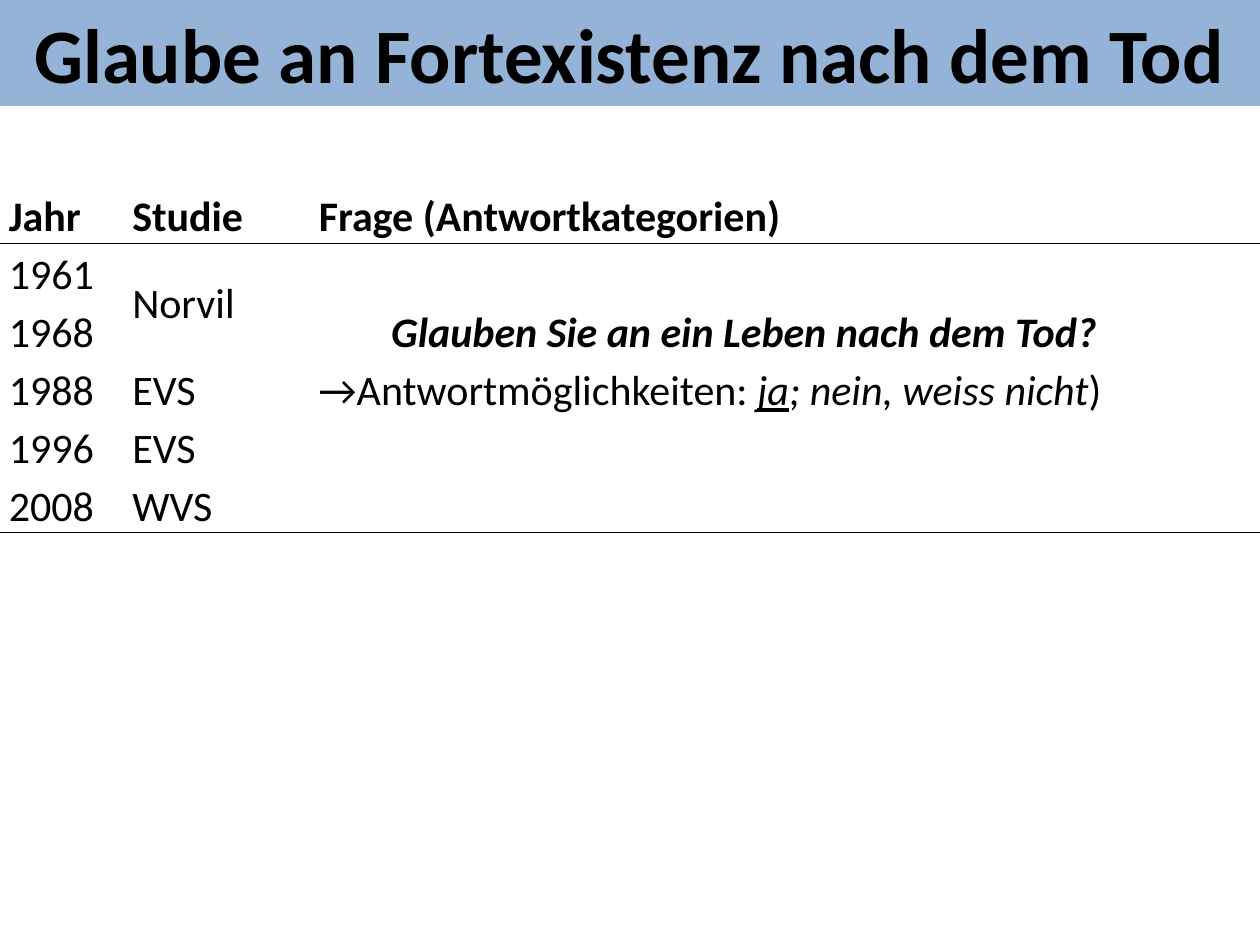
from dataclasses import dataclass

from lxml import etree
from pptx import Presentation
from pptx.dml.color import RGBColor
from pptx.enum.shapes import MSO_SHAPE
from pptx.enum.text import MSO_ANCHOR, PP_ALIGN
from pptx.oxml.ns import qn
from pptx.util import Inches, Pt

COLORS = {"banner": "95B3D7", "text": "000000", "rule": "000000", "paper": "FFFFFF"}
FONT = "Calibri"
CENTER, JUSTIFY, LEFT = PP_ALIGN.CENTER, PP_ALIGN.JUSTIFY, PP_ALIGN.LEFT
MIDDLE = MSO_ANCHOR.MIDDLE
RECTANGLE = MSO_SHAPE.RECTANGLE
LINE_HEIGHT = 0.46
LINE_SPACING = 1.13
RULE_WIDTH = 0.5
COLUMN_WIDTHS = (0.98, 1.1, 7.72, 0.2)
SIDE_MARGIN = 0.07
QUESTION_COLUMN = 2
QUESTION_INDENT = 0.45


@dataclass
class Span:
    text: str
    bold: bool = False
    italic: bool = False
    underline: bool = False


@dataclass
class StudyRow:
    years: tuple[str, ...]
    study: str


STUDIES = (
    StudyRow(("1961", "1968"), "Norvil"),
    StudyRow(("1988",), "EVS"),
    StudyRow(("1996",), "EVS"),
    StudyRow(("2008",), "WVS"),
)
HEADINGS = ("Jahr", "Studie", "Frage (Antwortkategorien)")
QUESTION = [Span("Glauben Sie an ein Leben nach dem Tod?", bold=True, italic=True)]
ANSWERS = [
    Span("→Antwortmöglichkeiten: "),
    Span("ja", italic=True, underline=True),
    Span("; nein, weiss nicht", italic=True),
    Span(")"),
]


def rgb(name: str) -> RGBColor:
    return RGBColor.from_string(COLORS[name])


def write_spans(paragraph, spans: list[Span], size: float, align) -> None:
    paragraph.alignment = align
    for span in spans:
        run = paragraph.add_run()
        run.text = span.text
        font = run.font
        font.name, font.size = FONT, Pt(size)
        font.bold, font.italic, font.underline = span.bold, span.italic, span.underline
        font.color.rgb = rgb("text")


def write_cell(cell, lines: list[list[Span]], aligns: list) -> None:
    frame = cell.text_frame
    for index, (spans, align) in enumerate(zip(lines, aligns)):
        paragraph = frame.add_paragraph() if index else frame.paragraphs[0]
        paragraph.line_spacing = LINE_SPACING
        write_spans(paragraph, spans, 24, align)


def set_borders(cell, top: str, bottom: str) -> None:
    properties = cell._tc.get_or_add_tcPr()
    sides = {"lnL": "paper", "lnR": "paper", "lnT": top, "lnB": bottom}
    for position, (side, color) in enumerate(sides.items()):
        line = etree.Element(qn(f"a:{side}"), w=str(Pt(RULE_WIDTH)))
        fill = etree.SubElement(line, qn("a:solidFill"))
        etree.SubElement(fill, qn("a:srgbClr"), val=COLORS[color])
        properties.insert(position, line)


def add_banner(slide, title: str) -> None:
    banner = slide.shapes.add_shape(RECTANGLE, 0, 0, Inches(10), Inches(0.84))
    banner.shadow.inherit = False
    banner.fill.solid()
    banner.fill.fore_color.rgb = rgb("banner")
    banner.line.fill.background()
    banner.text_frame.word_wrap = True
    write_spans(banner.text_frame.paragraphs[0], [Span(title, bold=True)], 44, CENTER)


def add_study_table(slide) -> None:
    line_counts = [1] + [len(row.years) for row in STUDIES]
    last_row = len(STUDIES)
    table = slide.shapes.add_table(
        len(line_counts), len(COLUMN_WIDTHS), 0, Inches(1.47),
        Inches(sum(COLUMN_WIDTHS)), Inches(LINE_HEIGHT * sum(line_counts)),
    ).table
    table.first_row = table.horz_banding = False
    for column, width in zip(table.columns, COLUMN_WIDTHS):
        column.width = Inches(width)

    # Cell frame: rules below the heading and below the last row
    for row_index, count in enumerate(line_counts):
        table.rows[row_index].height = Inches(LINE_HEIGHT * count)
        top = "rule" if row_index == 1 else "paper"
        for column_index in range(len(COLUMN_WIDTHS)):
            cell = table.cell(row_index, column_index)
            cell.vertical_anchor = MIDDLE
            cell.margin_left = cell.margin_right = Inches(SIDE_MARGIN)
            cell.margin_top = cell.margin_bottom = 0
            cell.fill.background()
            spans_rows = column_index == QUESTION_COLUMN and row_index > 0
            ruled = row_index in (0, last_row) or spans_rows
            set_borders(cell, top, "rule" if ruled else "paper")

    # Headings
    for column_index, heading in enumerate(HEADINGS):
        write_cell(table.cell(0, column_index), [[Span(heading, bold=True)]], [LEFT])
    table.cell(0, QUESTION_COLUMN).margin_left = Inches(QUESTION_INDENT)

    # Years and studies
    for row_index, row in enumerate(STUDIES, start=1):
        years = [[Span(year)] for year in row.years]
        write_cell(table.cell(row_index, 0), years, [JUSTIFY] * len(years))
        write_cell(table.cell(row_index, 1), [[Span(row.study)]], [JUSTIFY])

    # Question shared by all studies, raised by half a line
    question = table.cell(1, QUESTION_COLUMN)
    question.merge(table.cell(last_row, QUESTION_COLUMN))
    question.margin_bottom = Inches(LINE_HEIGHT)
    question.margin_right = Inches(2 * SIDE_MARGIN)
    write_cell(question, [QUESTION, ANSWERS], [CENTER, LEFT])
    answer_properties = question.text_frame.paragraphs[1]._p.get_or_add_pPr()
    answer_properties.set("marL", str(Inches(QUESTION_INDENT - SIDE_MARGIN)))


def main() -> None:
    presentation = Presentation()
    presentation.slide_width, presentation.slide_height = Inches(10), Inches(7.5)
    slide = presentation.slides.add_slide(presentation.slide_layouts[6])
    add_banner(slide, "Glaube an Fortexistenz nach dem Tod")
    add_study_table(slide)
    presentation.save("out.pptx")


if __name__ == "__main__":
    main()
